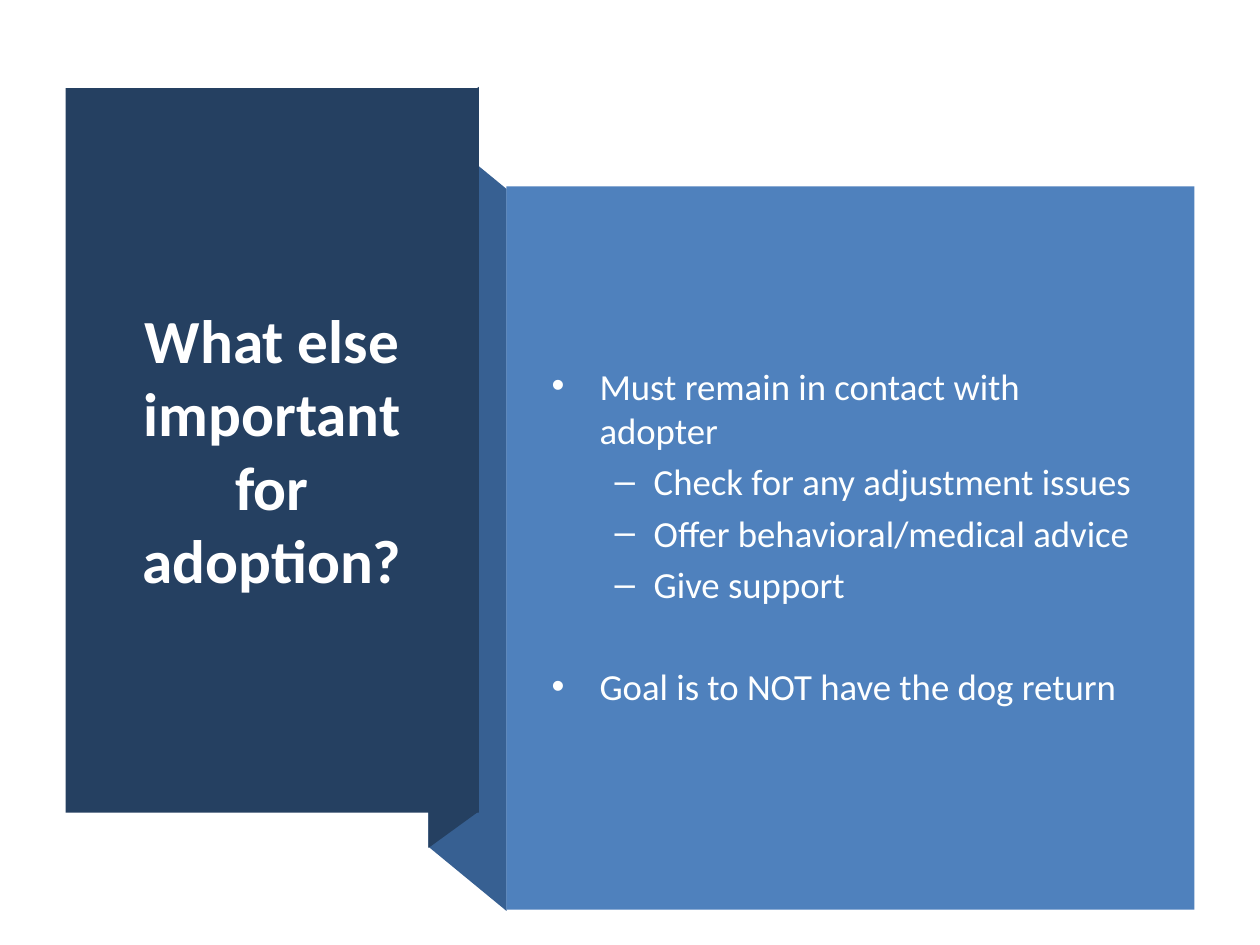
from lxml import etree
from pptx import Presentation
from pptx import util as u
from pptx.dml.color import RGBColor
from pptx.enum import shapes, text
from pptx.oxml import ns

NAVY = RGBColor(0x25, 0x40, 0x61)
STEEL = RGBColor(0x37, 0x60, 0x92)
BLUE = RGBColor(0x4F, 0x81, 0xBD)
WHITE = RGBColor(0xFF, 0xFF, 0xFF)
PALE = RGBColor(0xFE, 0xFF, 0xFF)

# Text, level, space before in points
NOTES = [
    ("Must remain in contact with adopter", 0, 4.2),
    ("Check for any adjustment issues", 1, 4.2),
    ("Offer behavioral/medical advice", 1, 4.2),
    ("Give support", 1, 4.2),
    ("Goal is to NOT have the dog return", 0, 33),
]
# Bullet sign, left margin and hang in inches, by level
MARKS = [("•", 0.38, 0.38), ("–", 0.81, 0.31)]


class Deck:
    def __init__(self, font):
        self.font = font
        self.prs = Presentation()
        self.prs.slide_width = u.Inches(10)
        self.prs.slide_height = u.Inches(7.5)
        self.slide = self.prs.slides.add_slide(self.prs.slide_layouts[5])

    def paint(self, shape, color):
        shape.shadow.inherit = False
        shape.fill.solid()
        shape.fill.fore_color.rgb = color
        shape.line.fill.background()

    def panel(self, box, color):
        rect = self.slide.shapes.add_shape(
            shapes.MSO_SHAPE.RECTANGLE, *map(u.Inches, box))
        self.paint(rect, color)

    def fold(self, points, color):
        """Draw a closed outline through points given in inches."""
        start, *rest = [(u.Inches(x), u.Inches(y)) for x, y in points]
        pen = self.slide.shapes.build_freeform(*start)
        pen.add_line_segments(rest, close=True)
        self.paint(pen.convert_to_shape(), color)

    def style(self, para, size, color, bold=False):
        for run in para.runs:
            font = run.font
            font.name, font.size, font.bold = self.font, u.Pt(size), bold
            font.color.rgb = color

    def frame(self, shape):
        body = shape.text_frame
        body.word_wrap = True
        body.auto_size = text.MSO_AUTO_SIZE.NONE
        body.vertical_anchor = text.MSO_ANCHOR.MIDDLE
        return body

    def title(self, words, box):
        """Fill the title and bring it to the front."""
        head = self.slide.shapes.title
        head.left, head.top, head.width, head.height = map(u.Inches, box)
        head.element.getparent().append(head.element)
        body = self.frame(head)
        body.text = words
        para = body.paragraphs[0]
        para.alignment = text.PP_ALIGN.CENTER
        self.style(para, 35, WHITE, bold=True)

    def bullet(self, para, level):
        sign, left, hang = MARKS[level]
        para.level = level
        props = para._p.get_or_add_pPr()
        props.set("marL", str(u.Inches(left)))
        props.set("indent", str(-u.Inches(hang)))
        etree.SubElement(props, ns.qn("a:buFont"), typeface="Arial")
        etree.SubElement(props, ns.qn("a:buChar"), char=sign)

    def notes(self, items, box):
        body = self.frame(self.slide.shapes.add_textbox(*map(u.Inches, box)))
        body.text = "\n".join(words for words, _, _ in items)
        for para, (_, level, gap) in zip(body.paragraphs, items):
            para.space_before = u.Pt(gap)
            self.bullet(para, level)
            self.style(para, 21, PALE)


def main():
    deck = Deck("Calibri")
    deck.fold([(4.02, 7.23), (3.4, 6.72), (3.4, 0.99), (4.02, 1.5)], STEEL)
    deck.fold([(3.8, 6.44), (3.4, 6.73), (3.4, 0.98), (3.8, 0.69)], NAVY)
    deck.panel((0.52, 0.7, 3.28, 5.75), NAVY)
    deck.title("What else important for adoption?", (0.77, 1.07, 2.78, 4.99))
    deck.panel((4.02, 1.48, 5.46, 5.74), BLUE)
    deck.notes(NOTES, (4.28, 1.88, 4.88, 4.74))
    deck.prs.save("out.pptx")


if __name__ == "__main__":
    main()
